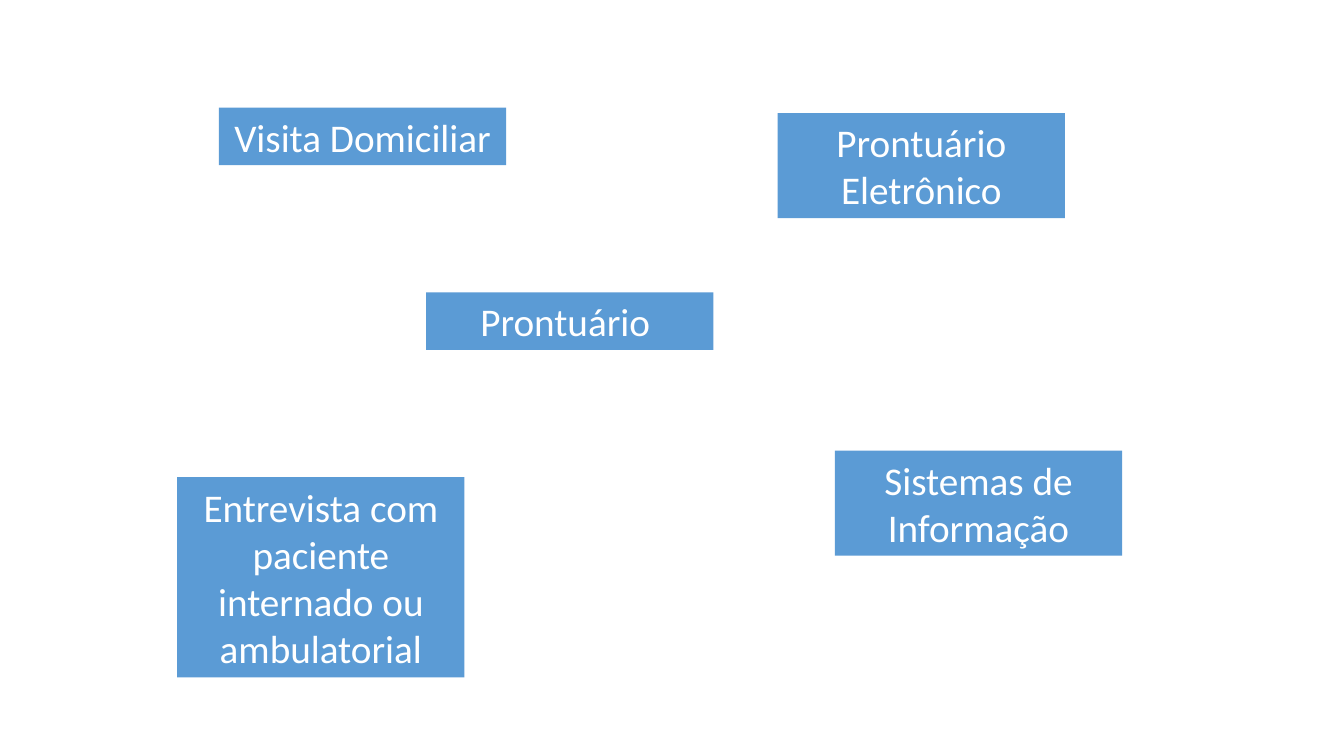
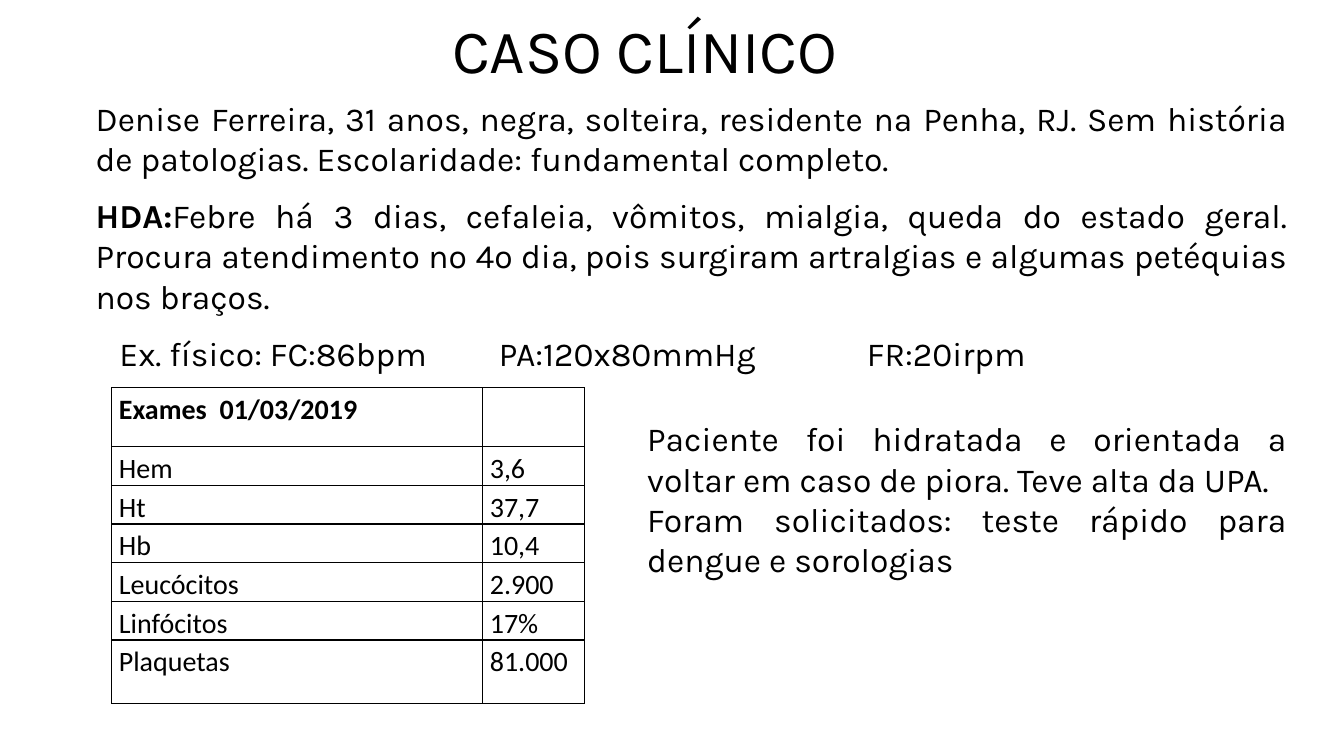
from lxml import etree
from pptx import Presentation
from pptx.dml.color import RGBColor
from pptx.enum.shapes import MSO_SHAPE
from pptx.enum.text import PP_ALIGN
from pptx.oxml.ns import qn
from pptx.util import Pt

RECT = MSO_SHAPE.RECTANGLE
LEFT, MID, JUST = PP_ALIGN.LEFT, PP_ALIGN.CENTER, PP_ALIGN.JUSTIFY
BLUE, WHITE, BLACK = "5B9BD5", "FFFFFF", "000000"
SANS, KARLA = "Calibri", "Karla"

BOX_W, LINE_H, PAD = 205.2, 34, 7
# text, left, top, lines of text
BOXES = [
    ("Visita Domiciliar", 156.4, 77, 1),
    ("Prontuário Eletrônico", 555.5, 80.8, 2),
    ("Entrevista com paciente internado ou ambulatorial", 126.6, 340.8, 4),
    ("Sistemas de Informação", 596.3, 322, 2),
    ("Prontuário ", 304.3, 208.9, 1),
]

CASE = [
    "Denise Ferreira, 31 anos, negra, solteira, residente na Penha, RJ. "
    "Sem história de patologias. Escolaridade: fundamental completo.",
    "Febre há 3 dias, cefaleia, vômitos, mialgia, queda do estado geral. "
    "Procura atendimento no 4º dia, pois surgiram artralgias e algumas "
    "petéquias nos braços.",
    "\tEx. físico: FC:86bpm\tPA:120x80mmHg\tFR:20irpm",
]
STOPS = [17, 288, 551]
PLAN = [
    "Paciente foi hidratada e orientada a voltar em caso de piora. "
    "Teve alta da UPA.",
    "Foram solicitados: teste rápido para dengue e sorologias",
]
EXAMS = [
    ("Exames  01/03/2019", ""),
    ("Hem", "3,6"),
    ("Ht", "37,7"),
    ("Hb", "10,4"),
    ("Leucócitos", "2.900"),
    ("Linfócitos", "17%"),
    ("Plaquetas", "81.000"),
]
COLS = [265, 72.7]
ROWS = [42] + [27.6] * 5 + [45.4]


def color(code):
    return RGBColor.from_string(code)


def style(par, size, face, code=BLACK, align=LEFT, bold=False):
    par.alignment = align
    for run in par.runs:
        font = run.font
        font.size, font.name, font.bold = Pt(size), face, bold
        font.color.rgb = color(code)


def add_box(slide, text, left, top, lines):
    box = slide.shapes.add_shape(
        RECT, Pt(left), Pt(top), Pt(BOX_W), Pt(PAD + LINE_H * lines))
    box.shadow.inherit = False
    box.fill.solid()
    box.fill.fore_color.rgb = color(BLUE)
    box.line.fill.background()
    box.text_frame.text = text
    style(box.text_frame.paragraphs[0], 28, SANS, WHITE, MID)


def add_text(slide, texts, area, size, align, gap=0):
    """Add a text box with one paragraph per text and return the paragraphs."""
    frame = slide.shapes.add_textbox(*map(Pt, area)).text_frame
    frame.word_wrap = True
    frame.text = "\n".join(texts)
    for par in frame.paragraphs:
        par.space_before = par.space_after = Pt(gap)
        style(par, size, KARLA, align=align)
    return frame.paragraphs


def add_lead(par, text):
    """Put a bold run before the paragraph's text."""
    body = par.text
    par.text = text
    style(par, 24, KARLA, align=JUST, bold=True)
    run = par.add_run()
    run.text = body
    run.font.size, run.font.name = Pt(24), KARLA
    run.font.color.rgb = color(BLACK)


def set_tabs(par, stops):
    tabs = etree.SubElement(par._p.get_or_add_pPr(), qn("a:tabLst"))
    for stop in stops:
        etree.SubElement(tabs, qn("a:tab"), pos=str(Pt(stop)), algn="l")


def add_edges(cell):
    props = cell._tc.get_or_add_tcPr()
    for at, side in enumerate(("a:lnL", "a:lnR", "a:lnT", "a:lnB")):
        line = etree.Element(qn(side), w=str(Pt(1)))
        fill = etree.SubElement(line, qn("a:solidFill"))
        etree.SubElement(fill, qn("a:srgbClr"), val=BLACK)
        props.insert(at, line)


def add_table(slide, data, left, top):
    table = slide.shapes.add_table(
        len(ROWS), len(COLS), Pt(left), Pt(top),
        Pt(sum(COLS)), Pt(sum(ROWS))).table
    table.horz_banding = False
    for col, width in zip(table.columns, COLS):
        col.width = Pt(width)
    for r, (row, height) in enumerate(zip(table.rows, ROWS)):
        row.height = Pt(height)
        for cell, text in zip(row.cells, data[r]):
            cell.fill.background()
            add_edges(cell)
            cell.margin_left = cell.margin_right = Pt(5)
            cell.margin_top = cell.margin_bottom = Pt(0)
            cell.text = text
            par = cell.text_frame.paragraphs[0]
            par.line_spacing = 1.15
            style(par, 20, SANS, bold=r == 0)


def add_sources(slide):
    for box in BOXES:
        add_box(slide, *box)


def add_case(slide):
    add_text(slide, ["CASO CLÍNICO"], (222.5, 5, 476.6, 60.5), 44, MID)
    pars = add_text(slide, CASE, (61.2, 66.2, 865.4, 247), 24, JUST, 6)
    add_lead(pars[1], "HDA:")
    set_tabs(pars[2], STOPS)
    add_table(slide, EXAMS, 79.9, 277)
    add_text(slide, PLAN, (455.2, 295.2, 470.9, 152.6), 24, JUST)


def main():
    deck = Presentation()
    deck.slide_width, deck.slide_height = Pt(960), Pt(540)
    blank = deck.slide_layouts[6]
    for build in (add_sources, add_case):
        build(deck.slides.add_slide(blank))
    deck.save("out.pptx")


if __name__ == "__main__":
    main()
